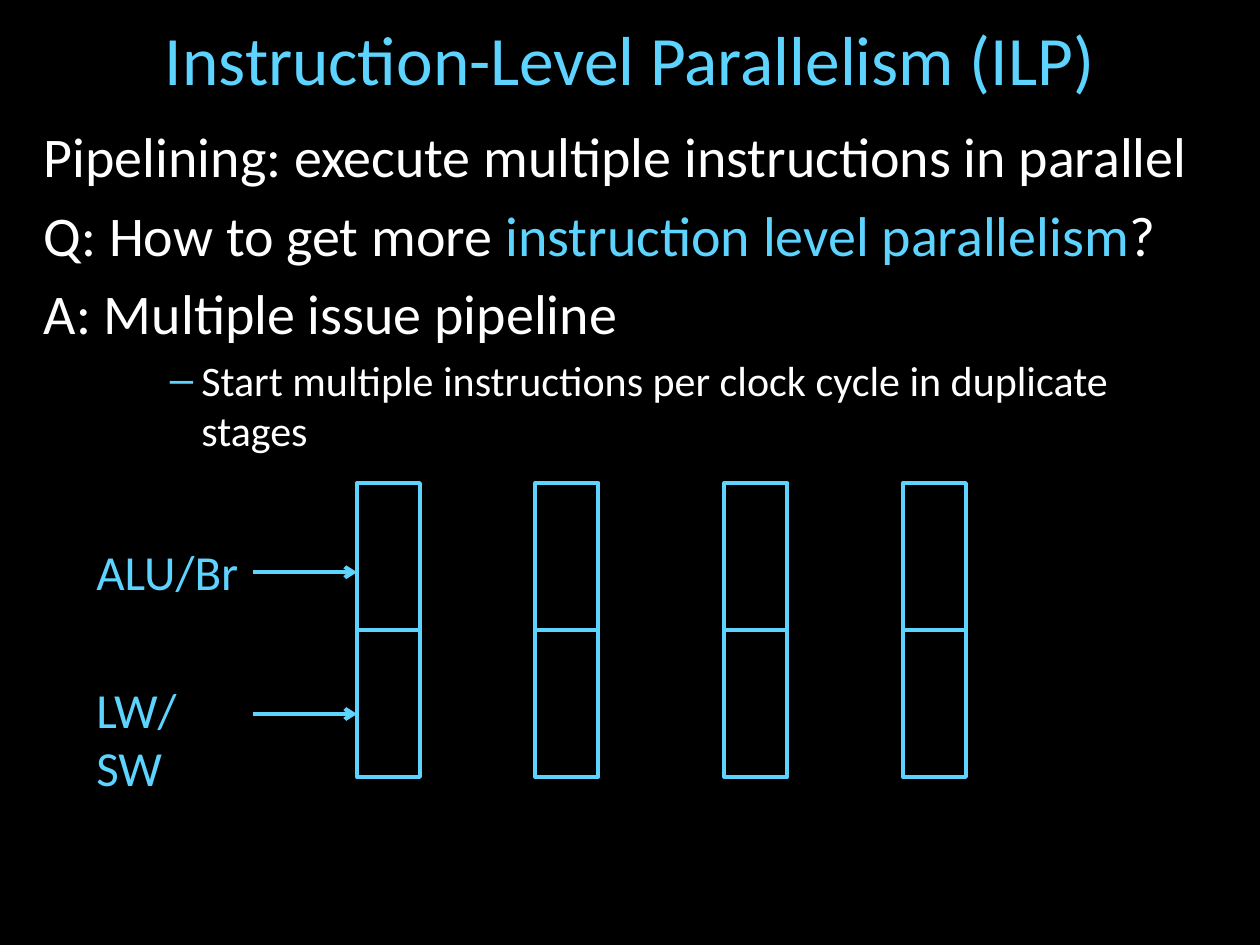
from dataclasses import dataclass

from lxml import etree
from pptx import Presentation
from pptx.dml.color import RGBColor
from pptx.enum import shapes, text
from pptx.oxml import ns
from pptx.util import Pt


@dataclass(frozen=True)
class Theme:
    font: str = "Calibri"
    black: str = "000000"
    white: str = "FFFFFF"
    accent: str = "5DD4FF"
    title: float = 39.6
    body: float = 32
    sub: float = 24
    label: float = 28
    line: float = 2.25


T = Theme()
STAGE_LEFTS = (204, 306, 414, 516)
STAGE_TOP, STAGE_W, STAGE_H = 276, 36, 84
ISSUE_SLOTS = (("ALU/Br", 306, 327), ("LW/SW", 384.5, 408))


def rgb(value):
    return RGBColor.from_string(value)


def set_attrs(obj, **values):
    for name, value in values.items():
        setattr(obj, name, value)


def add_run(p, words, size, color):
    r = p.add_run()
    r.text = words
    set_attrs(r.font, name=T.font, size=Pt(size))
    r.font.color.rgb = rgb(color)


def style_line(line):
    line.color.rgb = rgb(T.accent)
    line.width = Pt(T.line)


def add_title(s, words):
    sp = s.shapes.title
    set_attrs(sp, left=Pt(18), top=Pt(12), width=Pt(684), height=Pt(42))
    tf = sp.text_frame
    set_attrs(tf, word_wrap=True, auto_size=text.MSO_AUTO_SIZE.NONE,
              vertical_anchor=text.MSO_ANCHOR.MIDDLE)
    p = tf.paragraphs[0]
    p.alignment = text.PP_ALIGN.CENTER
    add_run(p, words, T.title, T.accent)


def add_dash_bullet(p, indent, hanging):
    pPr = p._p.get_or_add_pPr()
    pPr.set("marL", str(Pt(indent)))
    pPr.set("indent", str(-Pt(hanging)))
    color = etree.SubElement(pPr, ns.qn("a:buClr"))
    etree.SubElement(color, ns.qn("a:srgbClr"), val=T.accent)
    etree.SubElement(pPr, ns.qn("a:buFont"), typeface="Arial")
    etree.SubElement(pPr, ns.qn("a:buChar"), char="–")


def add_body(s, lines, detail):
    """Write lines of (words, colour) runs, then one bulleted detail."""
    tf = s.shapes.add_textbox(Pt(18), Pt(66), Pt(684), Pt(444)).text_frame
    tf.word_wrap = True
    for i, runs in enumerate(lines):
        p = tf.add_paragraph() if i else tf.paragraphs[0]
        p.space_before = Pt(T.body * 0.2)
        for words, color in runs:
            add_run(p, words, T.body, color)
    p = tf.add_paragraph()
    set_attrs(p, level=2, space_before=Pt(T.sub * 0.2))
    add_dash_bullet(p, 90, 18)
    add_run(p, detail, T.sub, T.white)


def add_stage(s, left):
    """Draw a pipeline register as a pair of stacked boxes."""
    stage = s.shapes.add_group_shape()
    for row in range(2):
        sp = stage.shapes.add_shape(
            shapes.MSO_SHAPE.RECTANGLE, Pt(left),
            Pt(STAGE_TOP + row * STAGE_H), Pt(STAGE_W), Pt(STAGE_H))
        sp.shadow.inherit = False
        sp.fill.background()
        style_line(sp.line)


def add_label(s, words, top):
    tf = s.shapes.add_textbox(Pt(48), Pt(top), Pt(97), Pt(41)).text_frame
    set_attrs(tf, word_wrap=False,
              auto_size=text.MSO_AUTO_SIZE.SHAPE_TO_FIT_TEXT)
    add_run(tf.paragraphs[0], words, T.label, T.accent)


def add_arrow(s, y):
    c = s.shapes.add_connector(shapes.MSO_CONNECTOR.STRAIGHT,
                               Pt(144.5), Pt(y), Pt(STAGE_LEFTS[0]), Pt(y))
    style_line(c.line)
    etree.SubElement(c.line._get_or_add_ln(), ns.qn("a:tailEnd"), type="arrow")
    etree.SubElement(c._element.spPr, ns.qn("a:effectLst"))


def main():
    prs = Presentation()
    set_attrs(prs, slide_width=Pt(720), slide_height=Pt(540))
    s = prs.slides.add_slide(prs.slide_layouts[5])
    s.background.fill.solid()
    s.background.fill.fore_color.rgb = rgb(T.black)

    add_title(s, "Instruction-Level Parallelism (ILP)")
    add_body(s, [
        [("Pipelining: execute multiple instructions in parallel", T.white)],
        [("Q: How to get more ", T.white),
         ("instruction level parallelism", T.accent), ("?", T.white)],
        [("A: Multiple issue pipeline", T.white)],
    ], "Start multiple instructions per clock cycle in duplicate stages")
    for left in STAGE_LEFTS:
        add_stage(s, left)
    for words, top, arrow_y in ISSUE_SLOTS:
        add_label(s, words, top)
        add_arrow(s, arrow_y)
    prs.save("out.pptx")


if __name__ == "__main__":
    main()
